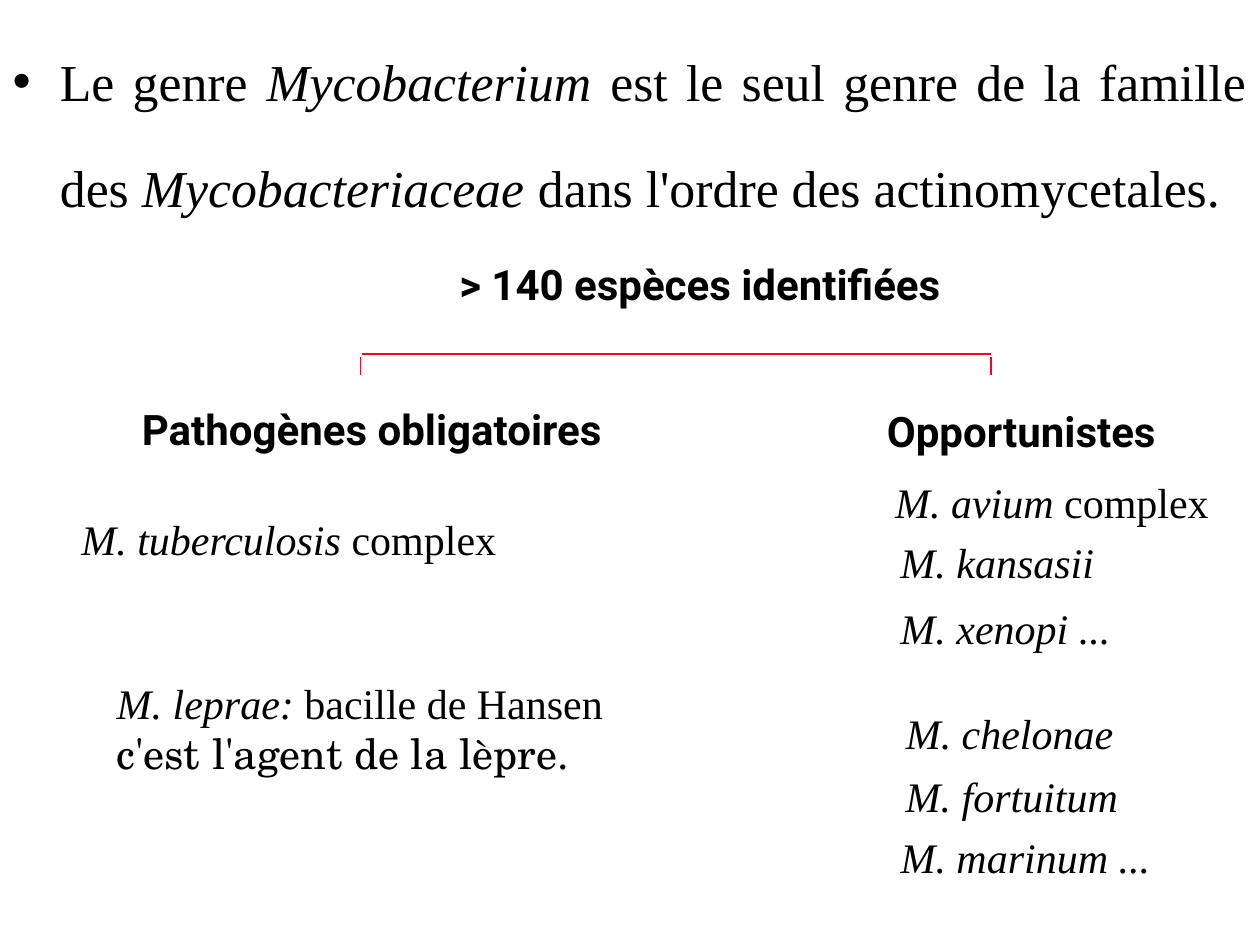
from lxml.etree import SubElement
from pptx import Presentation
from pptx.dml.color import RGBColor
from pptx.enum.shapes import MSO_CONNECTOR
from pptx.enum.text import MSO_ANCHOR, MSO_AUTO_SIZE, PP_ALIGN
from pptx.oxml.ns import qn
from pptx.util import Pt

COLORS = {"text": "000000", "bracket": "FC0128"}
SERIF = "Times New Roman"
HEADING = "Roboto"
SCHOOL = "TeX Gyre Schola"


def add_text(paragraph, text, font=SERIF, size=24, bold=False, italic=False):
    run = paragraph.add_run()
    run.text = text
    run.font.name = font
    run.font.size = Pt(size)
    run.font.bold = bold
    run.font.italic = italic
    run.font.color.rgb = RGBColor.from_string(COLORS["text"])


def add_runs(paragraph, runs, **style):
    """Add (text, italic) pairs that share one style."""
    for text, italic in runs:
        add_text(paragraph, text, italic=italic, **style)


class SlideBuilder:
    def __init__(self, presentation):
        self.slide = presentation.slides.add_slide(presentation.slide_layouts[1])
        title = self.slide.shapes.title
        title.element.getparent().remove(title.element)

    def body(self, left, top, width, height, runs, size):
        shape = self.slide.placeholders[1]
        shape.left, shape.top = Pt(left), Pt(top)
        shape.width, shape.height = Pt(width), Pt(height)
        frame = shape.text_frame
        frame.auto_size = MSO_AUTO_SIZE.NONE
        frame.vertical_anchor = MSO_ANCHOR.TOP
        paragraph = frame.paragraphs[0]
        paragraph.alignment = PP_ALIGN.JUSTIFY
        paragraph.line_spacing = 1.7
        paragraph.space_before = Pt(2.4)
        properties = paragraph._p.get_or_add_pPr()
        properties.set("marL", str(Pt(27)))
        properties.set("indent", str(-Pt(27)))
        SubElement(properties, qn("a:buChar"), char="•")
        add_runs(paragraph, runs, size=size)

    def label(self, left, top, width, height=36):
        """Add an unwrapped text box and return its text frame."""
        box = self.slide.shapes.add_textbox(Pt(left), Pt(top), Pt(width), Pt(height))
        frame = box.text_frame
        frame.word_wrap = False
        frame.auto_size = MSO_AUTO_SIZE.SHAPE_TO_FIT_TEXT
        return frame

    def heading(self, left, top, width, text):
        paragraph = self.label(left, top, width).paragraphs[0]
        add_text(paragraph, text, font=HEADING, bold=True)

    def species(self, left, top, width, runs, height=36):
        frame = self.label(left, top, width, height)
        add_runs(frame.paragraphs[0], runs)
        return frame

    def line(self, x1, y1, x2, y2):
        connector = self.slide.shapes.add_connector(
            MSO_CONNECTOR.STRAIGHT, Pt(x1), Pt(y1), Pt(x2), Pt(y2))
        connector.line.color.rgb = RGBColor.from_string(COLORS["bracket"])
        connector.line.width = Pt(1)
        SubElement(connector._element.spPr, qn("a:effectLst"))

    def bracket(self, left, right, top, bottom):
        self.line(left + 1, top, right, top)
        for x in (left, right):
            self.line(x, top + 1.5, x, bottom)


def main():
    presentation = Presentation()
    presentation.slide_width, presentation.slide_height = Pt(720), Pt(540)
    builder = SlideBuilder(presentation)

    builder.body(0, 0, 720, 151, [
        ("Le genre ", False),
        ("Mycobacterium ", True),
        ("est le seul genre de la famille des ", False),
        ("Mycobacteriaceae ", True),
        ("dans l'ordre des actinomycetales.", False),
    ], size=29.6)

    builder.bracket(206, 566.5, 202.5, 214.5)
    for left, top, width, text in (
        (255.4, 144.3, 304.6, "> 140 espèces identifiées"),
        (74, 226.8, 293, "Pathogènes obligatoires"),
        (499.7, 228.2, 178.6, "Opportunistes"),
    ):
        builder.heading(left, top, width, text)

    builder.species(39.4, 289.8, 253.4,
                    [("M. tuberculosis ", True), ("complex", False)])
    leprosy = builder.species(59.6, 383.4, 294.5,
                              [("M. leprae: ", True), ("bacille de Hansen", False)],
                              height=94.3)
    add_text(leprosy.add_paragraph(), "c'est l'agent de la lèpre.", font=SCHOOL)

    builder.species(504.4, 268.6, 194,
                    [("M. avium ", True), ("complex", False)])
    for left, top, width, name in (
        (507.5, 303.3, 127, "M. kansasii"),
        (507.5, 340.6, 136, "M. xenopi ..."),
        (510.5, 401, 135, "M. chelonae"),
        (510.5, 437, 138, "M. fortuitum"),
        (507.5, 471.6, 159, "M. marinum ..."),
    ):
        builder.species(left, top, width, [(name, True)])

    presentation.save("out.pptx")


if __name__ == "__main__":
    main()
